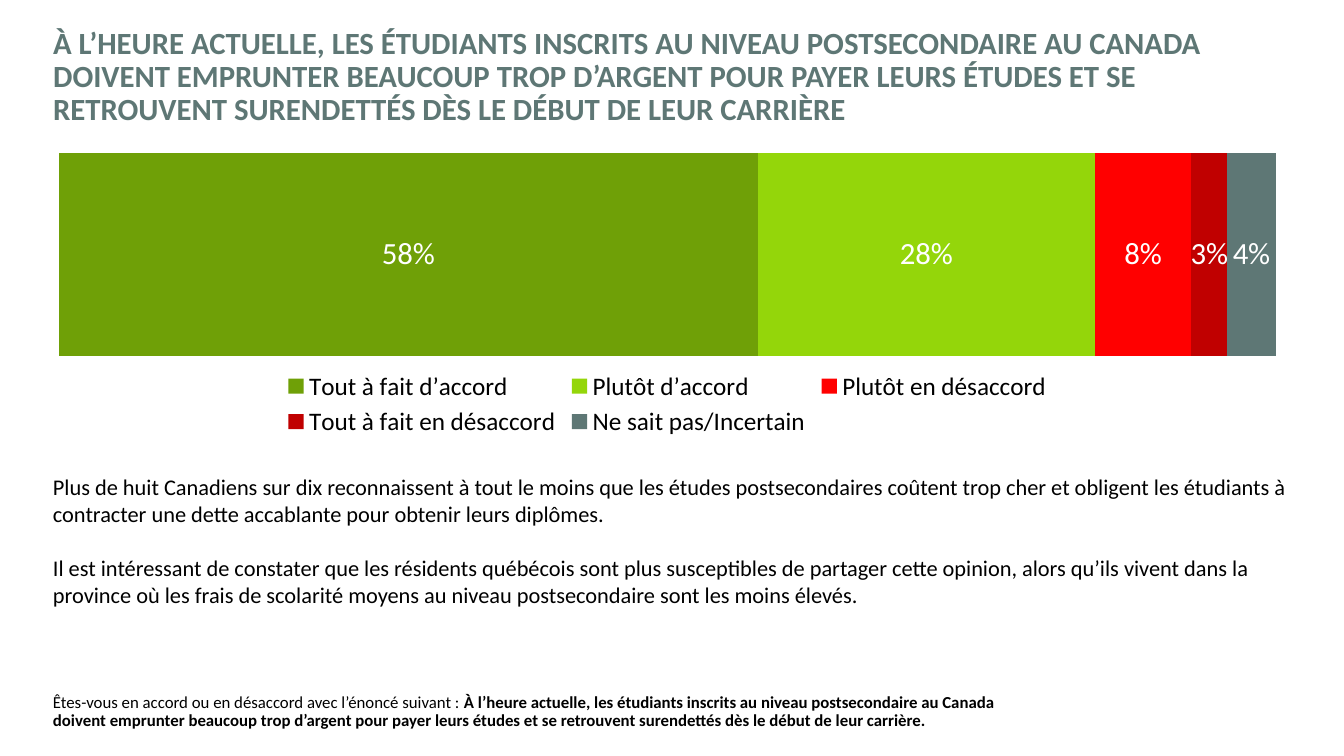
from lxml import etree
from pptx import Presentation
from pptx.chart.data import CategoryChartData
from pptx.dml.color import RGBColor
from pptx.enum.chart import XL_CHART_TYPE as ChartType, XL_LEGEND_POSITION as LegendPosition
from pptx.enum.text import MSO_ANCHOR as Anchor, PP_ALIGN as Align
from pptx.oxml import parse_xml
from pptx.oxml.ns import nsdecls, qn
from pptx.util import Emu, Pt

PX = 9525  # EMU per pixel, 96 pixels to the inch
FONT = "Calibri"
COLORS = {
    "text": "000000",
    "label": "FFFFFF",
    "title": "5E7775",
    "strong_agree": "6FA007",
    "agree": "94D60A",
    "disagree": "FF0000",
    "strong_disagree": "C00000",
    "unsure": "5E7775",
}
ANSWERS = [
    ("Tout à fait d’accord", 0.58, "strong_agree"),
    ("Plutôt d’accord", 0.28, "agree"),
    ("Plutôt en désaccord", 0.08, "disagree"),
    ("Tout à fait en désaccord", 0.03, "strong_disagree"),
    ("Ne sait pas/Incertain", 0.04, "unsure"),
]
TITLE = (
    "À L’HEURE ACTUELLE, LES ÉTUDIANTS INSCRITS AU NIVEAU POSTSECONDAIRE AU CANADA "
    "DOIVENT EMPRUNTER BEAUCOUP TROP D’ARGENT POUR PAYER LEURS ÉTUDES ET SE "
    "RETROUVENT SURENDETTÉS DÈS LE DÉBUT DE LEUR CARRIÈRE"
)
FINDINGS = [
    "Plus de huit Canadiens sur dix reconnaissent à tout le moins que les études "
    "postsecondaires coûtent trop cher et obligent les étudiants à contracter une dette "
    "accablante pour obtenir leurs diplômes.",
    "Il est intéressant de constater que les résidents québécois sont plus susceptibles de "
    "partager cette opinion, alors qu’ils vivent dans la province où les frais de scolarité "
    "moyens au niveau postsecondaire sont les moins élevés.",
]
QUESTION = "Êtes-vous en accord ou en désaccord avec l’énoncé suivant : "
STATEMENT = (
    "À l’heure actuelle, les étudiants inscrits au niveau postsecondaire au Canada doivent "
    "emprunter beaucoup trop d’argent pour payer leurs études et se retrouvent surendettés "
    "dès le début de leur carrière."
)


def to_emu(box):
    return [Emu(length * PX) for length in box]


def style_font(font, size, color, bold=False):
    font.name = FONT
    font.size = Pt(size)
    font.bold = bold
    font.color.rgb = RGBColor.from_string(COLORS[color])


def add_title(slide, box):
    title = slide.shapes.title
    title.left, title.top, title.width, title.height = to_emu(box)
    frame = title.text_frame
    frame.text = TITLE
    frame.word_wrap = True
    frame.vertical_anchor = Anchor.MIDDLE
    para = frame.paragraphs[0]
    para.alignment = Align.LEFT
    para.line_spacing = 0.9
    style_font(para.runs[0].font, 22, "title", bold=True)


def add_text_frame(slide, box):
    frame = slide.shapes.add_textbox(*to_emu(box)).text_frame
    frame.word_wrap = True
    frame.vertical_anchor = Anchor.MIDDLE
    return frame


def set_inner_layout(plot_area, x, y, width, height):
    """Fix the plot's inner area as fractions of the chart."""
    for old in plot_area.findall(qn("c:layout")):
        plot_area.remove(old)
    layout = etree.Element(qn("c:layout"))
    manual = etree.SubElement(layout, qn("c:manualLayout"))
    settings = {"layoutTarget": "inner", "xMode": "edge", "yMode": "edge",
                "x": x, "y": y, "w": width, "h": height}
    for name, value in settings.items():
        etree.SubElement(manual, qn(f"c:{name}")).set("val", str(value))
    plot_area.insert(0, layout)


def add_answer_chart(slide, box):
    data = CategoryChartData(number_format="0%")
    data.categories = ["1"]
    for name, share, _ in ANSWERS:
        data.add_series(name, [share])
    chart = slide.shapes.add_chart(ChartType.BAR_STACKED_100, *to_emu(box), data).chart
    style_font(chart.font, 22, "text")
    chart.has_title = False

    # Transparent background
    clear = parse_xml(f'<c:spPr {nsdecls("c", "a")}><a:noFill/><a:ln><a:noFill/></a:ln></c:spPr>')
    chart.element.find(qn("c:chart")).addnext(clear)

    # Bar and its labels
    plot = chart.plots[0]
    plot.gap_width = 35
    plot.overlap = 100
    plot.vary_by_categories = False
    for series, (_, _, color) in zip(plot.series, ANSWERS):
        series.format.fill.solid()
        series.format.fill.fore_color.rgb = RGBColor.from_string(COLORS[color])
        labels = series.data_labels
        labels.show_value = True
        labels.number_format = "0%"
        labels.number_format_is_linked = False
        style_font(labels.font, 22, "label")

    # Hidden axes
    chart.category_axis.reverse_order = True
    chart.value_axis.has_major_gridlines = False
    for axis in (chart.category_axis, chart.value_axis):
        axis.visible = False

    # Legend
    chart.has_legend = True
    chart.legend.position = LegendPosition.BOTTOM
    chart.legend.include_in_layout = False
    style_font(chart.legend.font, 18, "text")
    set_inner_layout(plot.element.getparent() if hasattr(plot, "element")
                     else chart.element.find(".//" + qn("c:plotArea")),
                     0.02, 0.03, 0.96, 0.82)


def add_findings(slide, box):
    frame = add_text_frame(slide, box)
    for index, finding in enumerate(FINDINGS):
        para = frame.paragraphs[0] if index == 0 else frame.add_paragraph()
        para.text = finding
        if index:
            para.space_before = Pt(19.5)
        style_font(para.runs[0].font, 16, "text")


def add_question(slide, box):
    para = add_text_frame(slide, box).paragraphs[0]
    para.line_spacing = 0.9
    for text, bold in ((QUESTION, False), (STATEMENT, True)):
        span = para.add_run()
        span.text = text
        style_font(span.font, 12, "text", bold)


def build_survey_slide(deck):
    layout = deck.slide_layouts.get_by_name("Title Only")
    slide = deck.slides.add_slide(layout)
    left = 41
    add_answer_chart(slide, (32, 102, 1207, 319))
    add_findings(slide, (left, 445, 1197, 139))
    add_question(slide, (left, 643, 957, 70))
    add_title(slide, (left, 25, 1221, 98))


def main():
    deck = Presentation()
    deck.slide_width, deck.slide_height = to_emu((1280, 720))
    build_survey_slide(deck)
    deck.save("out.pptx")


if __name__ == "__main__":
    main()
